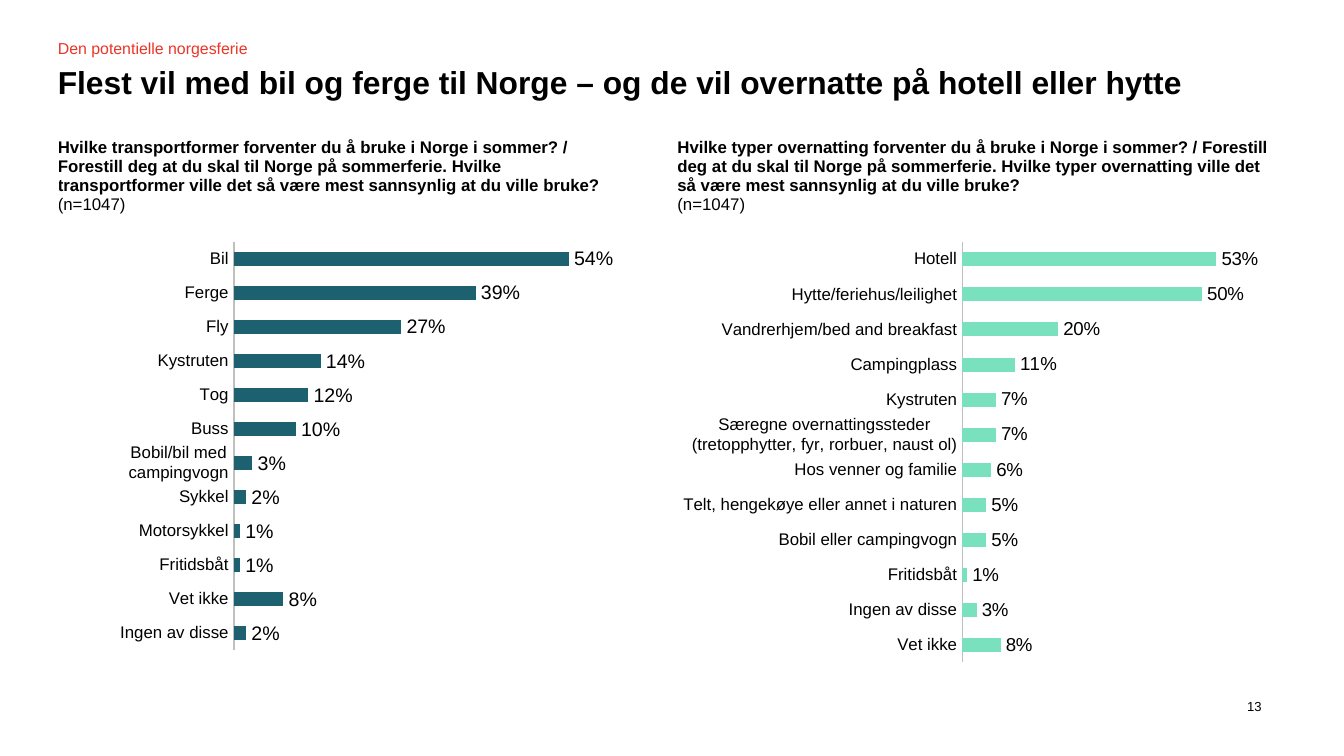
from dataclasses import dataclass

from lxml.etree import SubElement
from pptx import Presentation
from pptx.chart.data import CategoryChartData
from pptx.dml.color import RGBColor
from pptx.enum.chart import XL_CHART_TYPE, XL_LABEL_POSITION, XL_TICK_MARK
from pptx.enum.text import MSO_ANCHOR, MSO_AUTO_SIZE, PP_ALIGN
from pptx.oxml import parse_xml
from pptx.oxml.ns import nsdecls, qn
from pptx.util import Inches, Pt

FONT = "Arial"
HEIGHT = 3.39
COLORS = {
    "black": "000000",
    "white": "FFFFFF",
    "red": "ED3426",
    "axis": "BFBFBF",
    "teal": "1D6171",
    "mint": "7AE1BF",
}


@dataclass
class Panel:
    question: str
    left: float
    width: float
    start: float
    span: float
    plot: tuple[float, float, float, float]
    color: str
    size: float
    shares: dict[str, float]


PANELS = [
    Panel(
        "Hvilke transportformer forventer du å bruke i Norge i sommer? / "
        "Forestill deg at du skal til Norge på sommerferie. Hvilke "
        "transportformer ville det så være mest sannsynlig at du ville bruke?",
        0.43, 4.16, 0.46, 4.16, (1.28, 0.13, 2.77, 3.04), "teal", 10.5,
        {
            "Bil": 0.54,
            "Ferge": 0.39,
            "Fly": 0.27,
            "Kystruten": 0.14,
            "Tog": 0.12,
            "Buss": 0.1,
            "Bobil/bil med campingvogn": 0.03,
            "Sykkel": 0.02,
            "Motorsykkel": 0.01,
            "Fritidsbåt": 0.01,
            "Vet ikke": 0.08,
            "Ingen av disse": 0.02,
        },
    ),
    Panel(
        "Hvilke typer overnatting forventer du å bruke i Norge i sommer? / "
        "Forestill deg at du skal til Norge på sommerferie. Hvilke typer "
        "overnatting ville det så være mest sannsynlig at du ville bruke?",
        5.04, 4.5, 5.04, 4.38, (2.12, 0.13, 2.14, 3.13), "mint", 10,
        {
            "Hotell": 0.53,
            "Hytte/feriehus/leilighet": 0.5,
            "Vandrerhjem/bed and breakfast": 0.2,
            "Campingplass": 0.11,
            "Kystruten": 0.07,
            "Særegne overnattingssteder (tretopphytter, fyr, rorbuer, naust ol)": 0.07,
            "Hos venner og familie": 0.06,
            "Telt, hengekøye eller annet i naturen": 0.05,
            "Bobil eller campingvogn": 0.05,
            "Fritidsbåt": 0.01,
            "Ingen av disse": 0.03,
            "Vet ikke": 0.08,
        },
    ),
]


def tint(name: str) -> RGBColor:
    return RGBColor.from_string(COLORS[name])


def style(font, size: float, color: str = "black", bold: bool = False) -> None:
    font.name = FONT
    font.size = Pt(size)
    font.bold = bold
    font.color.rgb = tint(color)


def write(para, text: str, *, size: float, color: str = "black",
          bold: bool = False, spacing: float = 1.0) -> None:
    para.alignment = PP_ALIGN.LEFT
    para.line_spacing = spacing
    para.space_before = Pt(0)
    run = para.add_run()
    run.text = text
    style(run.font, size, color, bold)


def place(shape, left: float, top: float, width: float, height: float,
          wrap: bool = True):
    shape.left, shape.top = Inches(left), Inches(top)
    shape.width, shape.height = Inches(width), Inches(height)
    frame = shape.text_frame
    frame.margin_left = frame.margin_right = 0
    frame.margin_top = frame.margin_bottom = 0
    frame.vertical_anchor = MSO_ANCHOR.TOP
    frame.auto_size = MSO_AUTO_SIZE.NONE
    frame.word_wrap = wrap
    return frame.paragraphs[0]


def ask(slide, panel: Panel) -> None:
    table = slide.shapes.add_table(
        1, 1, Inches(panel.left), Inches(1.03), Inches(panel.width), Inches(0.68)
    ).table
    table.first_row = table.horz_banding = False
    cell = table.cell(0, 0)
    cell.fill.background()
    cell.margin_left = cell.margin_right = cell.margin_top = 0
    cell.margin_bottom = Inches(0.08)
    frame = cell.text_frame
    write(frame.paragraphs[0], panel.question, size=9, bold=True)
    write(frame.add_paragraph(), "(n=1047)", size=9)


def layout(chart, panel: Panel) -> None:
    area = chart._chartSpace.find(".//" + qn("c:plotArea"))
    old = area.find(qn("c:layout"))
    if old is not None:
        area.remove(old)
    node = parse_xml(f"<c:layout {nsdecls('c')}><c:manualLayout/></c:layout>")
    values = [("layoutTarget", "inner"), ("xMode", "edge"), ("yMode", "edge")]
    whole = (panel.span, HEIGHT) * 2
    values += [(tag, part / full) for tag, part, full in zip("xywh", panel.plot, whole)]
    for tag, value in values:
        SubElement(node[0], qn("c:" + tag)).set("val", str(value))
    area.insert(0, node)


def draw(slide, panel: Panel) -> None:
    data = CategoryChartData(number_format="###0%")
    data.categories = list(reversed(panel.shares))
    data.add_series("Series 1", list(reversed(panel.shares.values())))
    chart = slide.shapes.add_chart(
        XL_CHART_TYPE.BAR_CLUSTERED, Inches(panel.start), Inches(1.67),
        Inches(panel.span), Inches(HEIGHT), data
    ).chart
    chart.has_legend = chart.has_title = False
    style(chart.font, 10)
    layout(chart, panel)

    names = chart.category_axis
    names.major_tick_mark = names.minor_tick_mark = XL_TICK_MARK.NONE
    names.has_major_gridlines = False
    names.format.line.color.rgb = tint("axis")
    names.format.line.width = Pt(0.75)
    style(names.tick_labels.font, 9)

    scale = chart.value_axis
    scale.visible = scale.has_major_gridlines = False
    scale.minimum_scale, scale.maximum_scale = 0, 0.6
    scale.major_unit = 0.2

    bars = chart.plots[0]
    bars.gap_width = 150
    bars.vary_by_categories = False
    fill = bars.series[0].format.fill
    fill.solid()
    fill.fore_color.rgb = tint(panel.color)
    bars.has_data_labels = True
    labels = bars.data_labels
    labels.show_value = True
    labels.position = XL_LABEL_POSITION.OUTSIDE_END
    labels.number_format = "###0%"
    labels.number_format_is_linked = False
    style(labels.font, panel.size)


def main() -> None:
    deck = Presentation()
    deck.slide_width = Inches(10)
    deck.slide_height = deck.slide_width * 9 // 16
    slide = deck.slides.add_slide(deck.slide_layouts[1])

    title = slide.shapes.title
    title.fill.solid()
    title.fill.fore_color.rgb = tint("white")
    write(place(title, 0.43, 0.49, 8.74, 0.54),
          "Flest vil med bil og ferge til Norge – og de vil overnatte på hotell eller hytte",
          size=17, bold=True, spacing=0.95)

    topic = place(slide.placeholders[1], 0.43, 0.29, 1.43, 0.14, wrap=False)
    props = topic._p.get_or_add_pPr()
    props.set("marL", "0")
    props.set("indent", "0")
    SubElement(props, qn("a:buNone"))
    write(topic, "Den potentielle norgesferie", size=8.5, color="red")

    for panel in PANELS:
        ask(slide, panel)
        draw(slide, panel)

    number = slide.shapes.add_textbox(0, 0, 0, 0)
    write(place(number, 9.28, 5.2, 0.28, 0.12), "13", size=7)
    deck.save("out.pptx")


if __name__ == "__main__":
    main()
